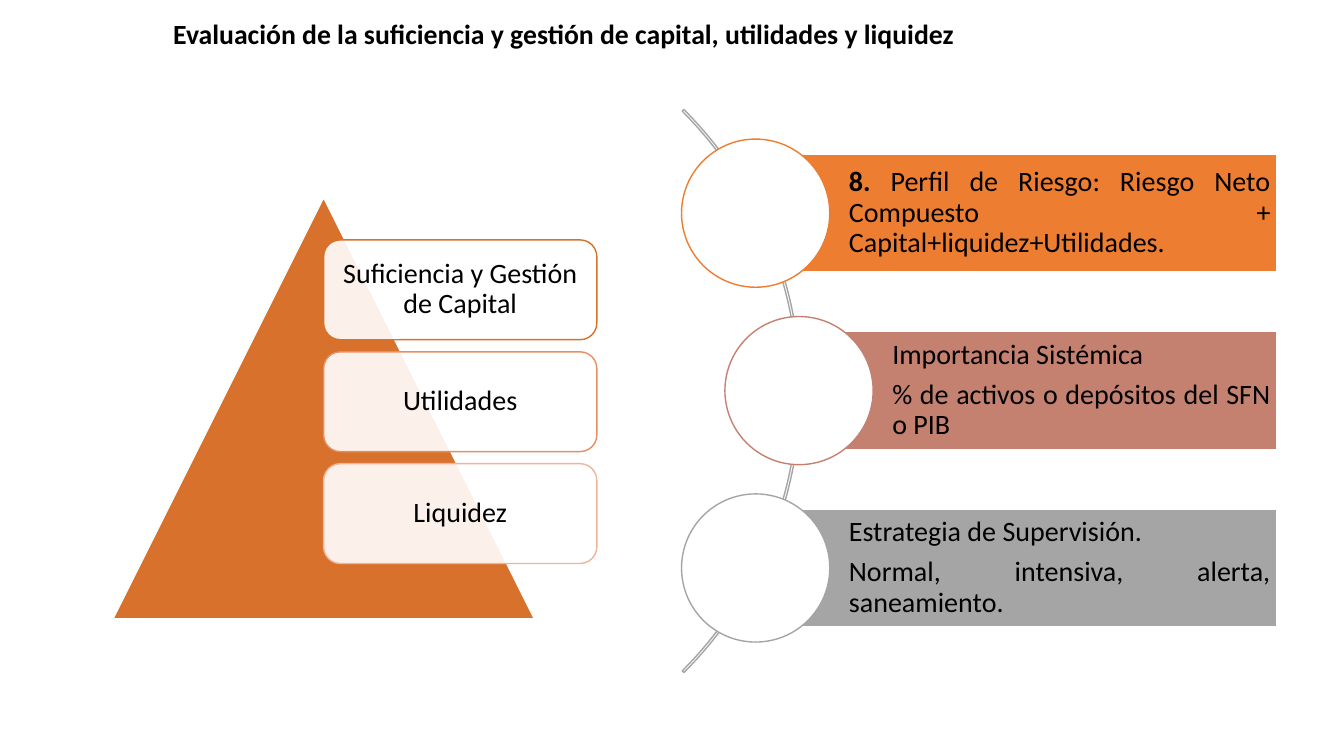
from dataclasses import dataclass

from lxml.etree import SubElement
from pptx import Presentation
from pptx.dml.color import RGBColor
from pptx.enum.shapes import MSO_SHAPE as Kind
from pptx.enum.text import MSO_ANCHOR as Anchor, PP_ALIGN as Align
from pptx.oxml.ns import qn
from pptx.shapes.autoshape import Shape
from pptx.text.text import TextFrame
from pptx.util import Inches, Pt

BLACK = RGBColor(0x00, 0x00, 0x00)
WHITE = RGBColor(0xFF, 0xFF, 0xFF)
RUST = RGBColor(0xD7, 0x71, 0x2C)
CORAL = RGBColor(0xE7, 0x8F, 0x62)
PEACH = RGBColor(0xF3, 0xB3, 0x9B)
ORANGE = RGBColor(0xED, 0x7D, 0x31)
ROSE = RGBColor(0xC4, 0x81, 0x70)
GRAY = RGBColor(0xA5, 0xA5, 0xA5)

Box = tuple[float, float, float, float]
Line = list[tuple[str, bool]]  # runs of one paragraph: text, bold


@dataclass
class Card:
    text: str
    edge: RGBColor


@dataclass
class Bar:
    left: float
    color: RGBColor
    lines: list[Line]


CARDS = [
    Card("Suficiencia y Gestión de Capital", RUST),
    Card("Utilidades", CORAL),
    Card("Liquidez", PEACH),
]
BARS = [
    Bar(7.49, ORANGE, [[
        ("8. ", True),
        ("Perfil de Riesgo: Riesgo Neto Compuesto + Capital+liquidez+Utilidades.", False),
    ]]),
    Bar(7.92, ROSE, [
        [("Importancia Sistémica", False)],
        [("% de activos o depósitos del SFN o PIB", False)],
    ]),
    Bar(7.49, GRAY, [
        [("Estrategia de Supervisión.", False)],
        [("Normal, intensiva, alerta, saneamiento.", False)],
    ]),
]
TITLE = "Evaluación de la suficiencia y gestión de capital, utilidades y liquidez"

CARD_TOP, CARD_STEP = 2.38, 1.11
BAR_TOP, BAR_STEP, BAR_HIGH, BAR_END = 1.53, 1.76, 1.17, 12.66
DISC, DISC_IN = 1.47, 0.73

deck = Presentation()
deck.slide_width, deck.slide_height = Inches(13.33), Inches(7.5)
slide = deck.slides.add_slide(deck.slide_layouts[6])


def add_form(kind: Kind, box: Box, fill: RGBColor | None, edge: RGBColor) -> Shape:
    form = slide.shapes.add_shape(kind, *map(Inches, box))
    form.shadow.inherit = False
    if fill is None:
        form.fill.background()
    else:
        form.fill.solid()
        form.fill.fore_color.rgb = fill
    form.line.color.rgb = edge
    form.line.width = Pt(1)
    return form


def write(frame: TextFrame, lines: list[Line], align: Align,
          left: float, pad: float, size: float = 20) -> None:
    look = {
        "word_wrap": True,
        "vertical_anchor": Anchor.MIDDLE,
        "margin_left": Inches(left),
        "margin_right": Inches(pad),
        "margin_top": Inches(pad),
        "margin_bottom": Inches(pad),
    }
    for name, value in look.items():
        setattr(frame, name, value)
    for i, line in enumerate(lines):
        para = frame.paragraphs[0] if i == 0 else frame.add_paragraph()
        para.alignment = align
        para.line_spacing = 0.9
        if i < len(lines) - 1:
            para.space_after = Pt(7)
        for text, bold in line:
            run = para.add_run()
            run.text = text
            for name, value in {"name": "Calibri", "size": Pt(size), "bold": bold}.items():
                setattr(run.font, name, value)
            run.font.color.rgb = BLACK


def set_alpha(form: Shape, share: int) -> None:
    color = form.fill._xPr.find(qn("a:solidFill"))[0]
    SubElement(color, qn("a:alpha")).set("val", str(share * 1000))


# Title
head = slide.shapes.add_textbox(*map(Inches, (1.62, 0.14, 10.96, 0.43)))
write(head.text_frame, [[(TITLE, True)]], Align.LEFT, 0.1, 0.05, 19.8)

# Triangle with its cards
add_form(Kind.ISOSCELES_TRIANGLE, (1.12, 1.96, 4.18, 4.18), RUST, WHITE)
for i, card in enumerate(CARDS):
    top = CARD_TOP + i * CARD_STEP
    form = add_form(Kind.ROUNDED_RECTANGLE, (3.21, top, 2.71, 0.99), WHITE, card.edge)
    set_alpha(form, 90)
    write(form.text_frame, [[(card.text, False)]], Align.CENTER, 0.08, 0.08)

# Arc behind the bars
arc = add_form(Kind.BLOCK_ARC, (0.04, -0.07, 7.9, 7.9), None, GRAY)
for i, value in enumerate((189, 27, 0.3 / 100)):
    arc.adjustments[i] = value

# Bars with their discs
for i, bar in enumerate(BARS):
    top = BAR_TOP + i * BAR_STEP
    box = (bar.left, top, BAR_END - bar.left, BAR_HIGH)
    form = add_form(Kind.RECTANGLE, box, bar.color, WHITE)
    write(form.text_frame, bar.lines, Align.JUSTIFY, 0.93, 0.06)
    rise = (DISC - BAR_HIGH) / 2
    add_form(Kind.OVAL, (bar.left - DISC_IN, top - rise, DISC, DISC), WHITE, bar.color)

deck.save("out.pptx")
